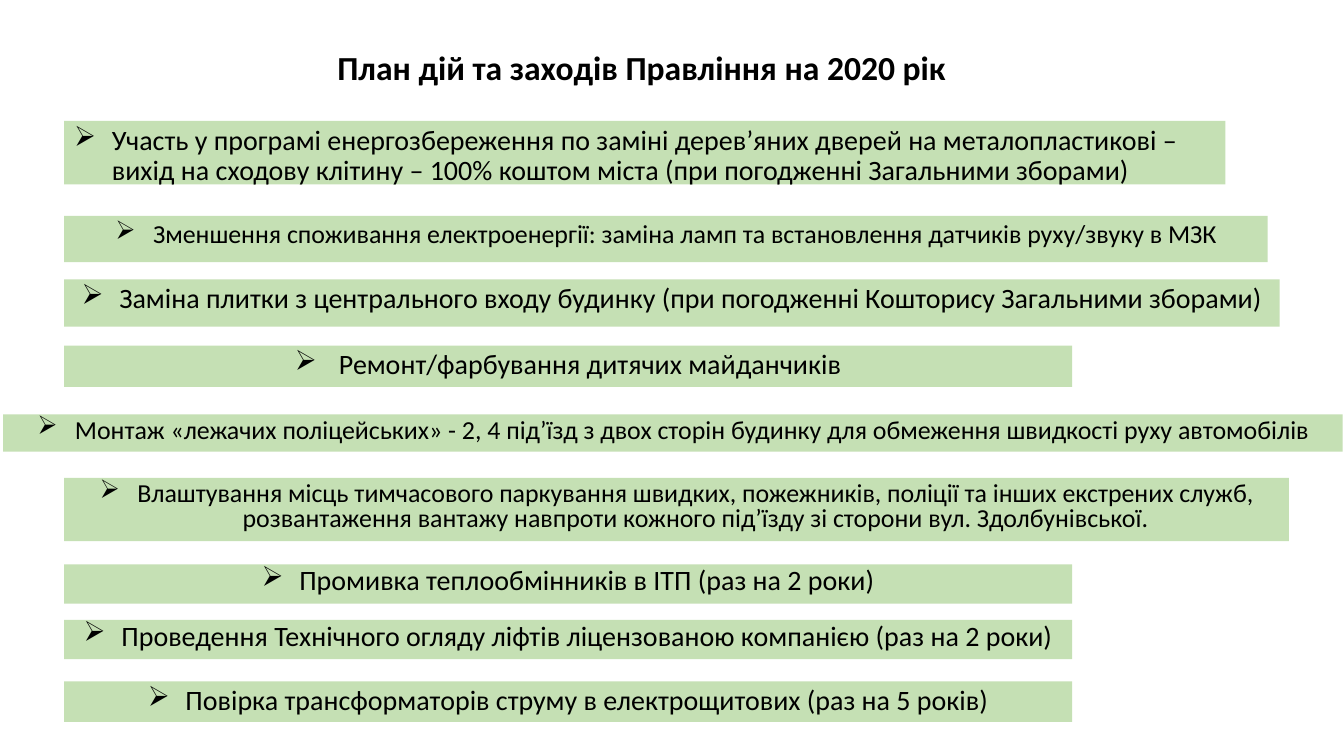
from pptx import Presentation
from pptx.dml.color import RGBColor
from pptx.enum.shapes import MSO_SHAPE
from pptx.enum.text import MSO_ANCHOR, MSO_AUTO_SIZE, PP_ALIGN
from pptx.util import Cm, Pt
from lxml import etree

RECT = MSO_SHAPE.RECTANGLE
TOP = MSO_ANCHOR.TOP
GROW = MSO_AUTO_SIZE.SHAPE_TO_FIT_TEXT
LEFT, MID = PP_ALIGN.LEFT, PP_ALIGN.CENTER
NS = "{http://schemas.openxmlformats.org/drawingml/2006/main}"


def color(code):
    return RGBColor.from_string(code)


def write(frame, text, size=20, bold=False, align=MID, line=None,
          mark=None, font="Calibri", ink="000000"):
    para = frame.paragraphs[0]
    para.alignment = align
    run = para.add_run()
    run.text = text
    run.font.name = font
    run.font.size = Pt(size)
    run.font.bold = bold
    run.font.color.rgb = color(ink)
    if line:
        para.line_spacing = line
    if mark:
        para.space_before = Pt(10)
        props = para._p.get_or_add_pPr()
        props.set("marL", str(Cm(0.95)))
        props.set("indent", str(-Cm(0.95)))
        etree.SubElement(props, NS + "buChar").set("char", mark)


class Board:
    band = "C5E0B4"
    mark = "➢"

    def __init__(self, slide):
        self.slide = slide

    def title(self, text, x, y, w, h):
        box = self.slide.shapes.add_textbox(Cm(x), Cm(y), Cm(w), Cm(h))
        box.text_frame.word_wrap = False
        box.text_frame.auto_size = GROW
        write(box.text_frame, text, size=24, bold=True)

    def bar(self, text, x, y, w, h, **style):
        bar = self.slide.shapes.add_shape(RECT, Cm(x), Cm(y), Cm(w), Cm(h))
        bar.shadow.inherit = False
        bar.fill.solid()
        bar.fill.fore_color.rgb = color(self.band)
        bar.line.fill.background()
        bar.text_frame.word_wrap = True
        bar.text_frame.vertical_anchor = TOP
        write(bar.text_frame, text, mark=self.mark, **style)


# Left edge and usual width of the bars, in cm
EDGE, WIDE = 1.62, 25.4

# Text, left, top, width, height, size, line spacing, alignment
PLANS = [
    ("Участь у програмі енергозбереження по заміні дерев’яних дверей на "
     "металопластикові –вихід на сходову клітину – 100% коштом міста "
     "(при погодженні Загальними зборами)",
     EDGE, 3.05, 29.26, 1.6, 20, 0.9, LEFT),
    ("Зменшення споживання електроенергії: заміна ламп та встановлення "
     "датчиків руху/звуку в МЗК",
     EDGE, 5.44, 30.33, 1.17, 18.5, 0.9, MID),
    ("Заміна плитки з центрального входу будинку (при погодженні "
     "Кошторису Загальними зборами)",
     EDGE, 7.04, 30.63, 1.19, 20, 0.9, MID),
    (" Ремонт/фарбування дитячих майданчиків",
     EDGE, 8.71, WIDE, 1.04, 20, 0.9, MID),
    ("Монтаж «лежачих поліцейських» - 2, 4 під’їзд з двох сторін будинку "
     "для обмеження швидкості руху автомобілів",
     0.08, 10.44, 33.76, 0.94, 18.5, 0.8, MID),
    ("Влаштування місць тимчасового паркування швидких, пожежників, "
     "поліції та інших екстрених служб, розвантаження вантажу навпроти "
     "кожного під’їзду зі сторони вул. Здолбунівської.",
     EDGE, 12.04, 30.86, 1.6, 18.5, 0.8, MID),
    ("Промивка теплообмінників в ІТП (раз на 2 роки)",
     EDGE, 14.22, WIDE, 0.99, 20, 0.8, MID),
    ("Проведення Технічного огляду ліфтів ліцензованою компанією "
     "(раз на 2 роки)",
     EDGE, 15.62, WIDE, 0.99, 20, 0.8, MID),
    ("Повірка трансформаторів струму в електрощитових (раз на 5 років)",
     EDGE, 17.17, WIDE, 1.02, 20, 0.9, MID),
]


def main():
    deck = Presentation()
    deck.slide_width, deck.slide_height = Cm(33.87), Cm(19.05)
    board = Board(deck.slides.add_slide(deck.slide_layouts[6]))

    # Heading
    board.title("План дій та заходів Правління на 2020 рік",
                8.18, 1.07, 15.98, 1.27)

    # Planned works
    for text, x, y, w, h, size, line, align in PLANS:
        board.bar(text, x, y, w, h, size=size, line=line, align=align)

    deck.save("out.pptx")


if __name__ == "__main__":
    main()
